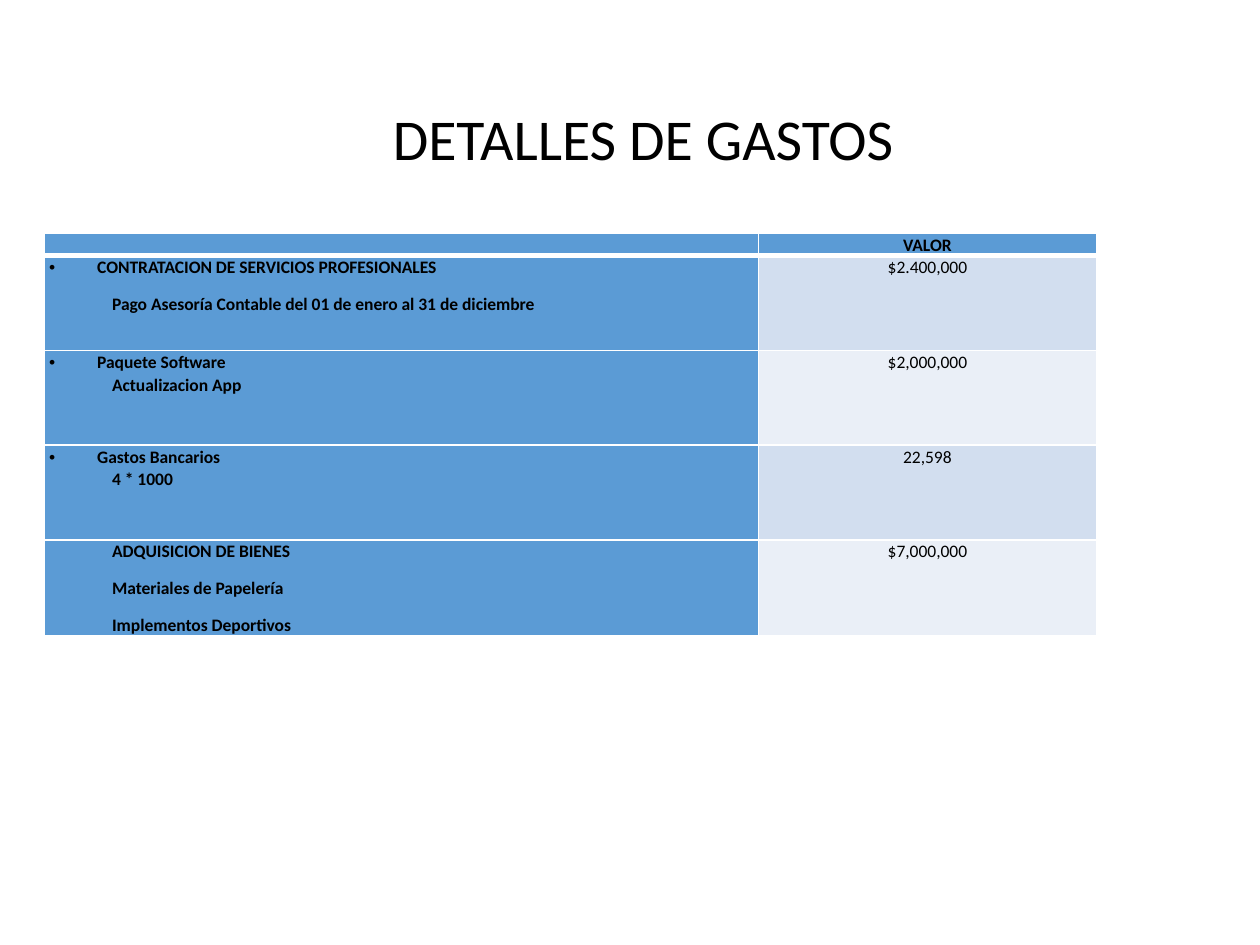
from lxml.etree import SubElement
from pptx import Presentation
from pptx.dml.color import RGBColor
from pptx.enum.text import MSO_ANCHOR as Anchor, PP_ALIGN as Align
from pptx.oxml import parse_xml
from pptx.oxml.ns import nsdecls, qn
from pptx.util import Cm, Pt

BLUE, PALE, PALER = "5B9BD5", "D2DEEF", "EAEFF7"
BLACK, WHITE = "000000", "FFFFFF"


def color(hex_code):
    return RGBColor.from_string(hex_code)


class SlideBuilder:
    font_name = "Calibri"
    table_size = 10

    def __init__(self, slide):
        self.slide = slide

    def style_runs(self, paragraph, size, bold=False):
        for run in paragraph.runs:
            run.font.name = self.font_name
            run.font.size = Pt(size)
            run.font.bold = bold
            run.font.color.rgb = color(BLACK)

    def title(self, text, left, top, width, height):
        shape = self.slide.shapes.add_textbox(Cm(left), Cm(top), Cm(width), Cm(height))
        frame = shape.text_frame
        frame.word_wrap = True
        frame.vertical_anchor = Anchor.MIDDLE
        frame.margin_left = Cm(0.78)  # moves the title slightly right of centre
        frame.text = text
        paragraph = frame.paragraphs[0]
        paragraph.alignment = Align.CENTER
        paragraph.line_spacing = 0.9
        self.style_runs(paragraph, 33)

    def table(self, left, top, column_widths, row_heights):
        frame = self.slide.shapes.add_table(
            len(row_heights), len(column_widths), Cm(left), Cm(top),
            Cm(sum(column_widths)), Cm(sum(row_heights)))
        table = frame.table
        table.first_row = table.horz_banding = False
        for column, width in zip(table.columns, column_widths):
            column.width = Cm(width)
        for row, height in zip(table.rows, row_heights):
            row.height = Cm(height)
        return table

    def borders(self, cell, top, bottom):
        properties = cell._tc.get_or_add_tcPr()
        sides = {"lnL": 1, "lnR": 1, "lnT": top, "lnB": bottom}
        for index, (side, width) in enumerate(sides.items()):
            properties.insert(index, parse_xml(
                f'<a:{side} {nsdecls("a")} w="{Pt(width)}"><a:solidFill>'
                f'<a:srgbClr val="{WHITE}"/></a:solidFill></a:{side}>'))

    def cell(self, cell, fill, top=1, bottom=1):
        cell.margin_left = cell.margin_right = Cm(0.1)
        cell.margin_top = cell.margin_bottom = 0
        self.borders(cell, top, bottom)
        cell.fill.solid()
        cell.fill.fore_color.rgb = color(fill)
        # Keeps an empty cell as low as its row
        paragraph = cell.text_frame.paragraphs[0]
        SubElement(paragraph._p, qn("a:endParaRPr"), sz=str(self.table_size * 100))

    def cell_text(self, cell, lines, align, bold, space_after=8, bullet=False, indent=0):
        cell.text_frame.text = "\n".join(lines)
        for index, paragraph in enumerate(cell.text_frame.paragraphs):
            paragraph.alignment = align
            paragraph.line_spacing = 1.07
            paragraph.space_after = Pt(space_after)
            properties = paragraph._p.get_or_add_pPr()
            properties.set("marL", str(Cm(indent)))
            if bullet and index == 0:
                properties.set("marL", str(Cm(0.97)))
                properties.set("indent", str(-Cm(0.97)))
                SubElement(properties, qn("a:buFont"), typeface="Arial")
                SubElement(properties, qn("a:buChar"), char="•")
            self.style_runs(paragraph, self.table_size, bold)


def main():
    presentation = Presentation()
    presentation.slide_width, presentation.slide_height = Cm(25.4), Cm(19.05)
    builder = SlideBuilder(presentation.slides.add_slide(presentation.slide_layouts[6]))

    # Title
    builder.title("DETALLES DE GASTOS", 1.75, 1.02, 21.9, 3.68)

    # Expenses: lines, value, bulleted, space after each line
    expenses = [
        (["CONTRATACION DE SERVICIOS PROFESIONALES",
          "Pago Asesoría Contable del 01 de enero al 31 de diciembre"],
         "$2.400,000", True, 8),
        (["Paquete Software", "Actualizacion App"], "$2,000,000", True, 0),
        (["Gastos Bancarios", "4 * 1000"], "22,598", True, 0),
        (["ADQUISICION DE BIENES", "Materiales de Papelería", "Implementos Deportivos"],
         "$7,000,000", False, 8),
    ]
    table = builder.table(0.89, 4.7, [14.4, 6.81], [0.43] + [1.91] * len(expenses))

    # Header row
    for column in range(2):
        builder.cell(table.cell(0, column), BLUE, bottom=3)
    builder.cell_text(table.cell(0, 1), ["VALOR"], Align.CENTER, bold=True)

    # Expense rows
    for row, (lines, value, bullet, space_after) in enumerate(expenses, start=1):
        label_cell, value_cell = table.cell(row, 0), table.cell(row, 1)
        top = 3 if row == 1 else 1
        builder.cell(label_cell, BLUE, top)
        builder.cell(value_cell, PALE if row % 2 else PALER, top)
        builder.cell_text(label_cell, lines, Align.JUSTIFY, True, space_after, bullet, 1.27)
        builder.cell_text(value_cell, [value], Align.CENTER, bold=False)

    presentation.save("out.pptx")


if __name__ == "__main__":
    main()
